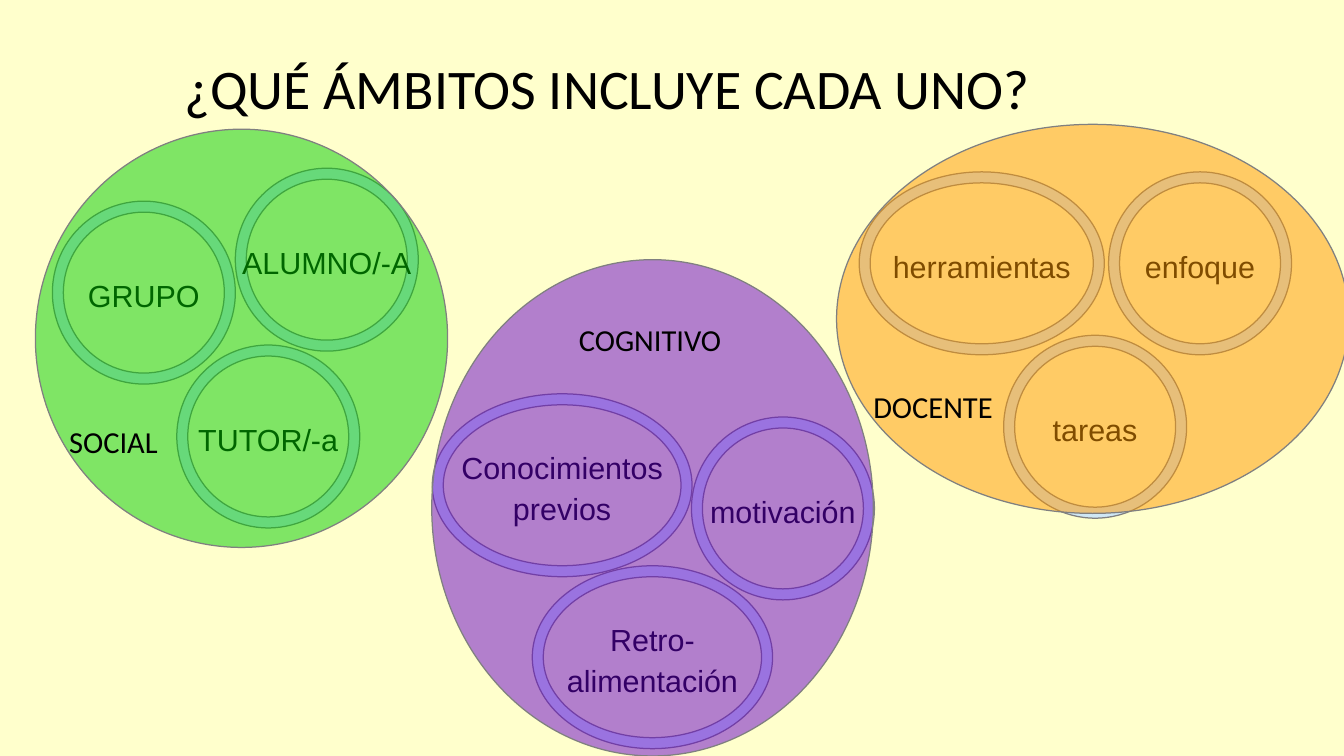
"""Slide with three translucent circles, each holding three labelled rings."""
from lxml import etree
from pptx import Presentation
from pptx.dml.color import RGBColor
from pptx.enum.shapes import MSO_SHAPE
from pptx.enum.text import MSO_ANCHOR, PP_ALIGN
from pptx.oxml.ns import qn
from pptx.util import Inches, Pt

OVAL, DONUT = MSO_SHAPE.OVAL, MSO_SHAPE.DONUT
MIDDLE, TOP, CENTER = MSO_ANCHOR.MIDDLE, MSO_ANCHOR.TOP, PP_ALIGN.CENTER
CELL = Inches(0.1)
COLS, ROWS = 110.2, 62
RING_H, BAND = 15, 0.06
LABEL_W, LABEL_H = 20.2, 7.3

AREAS = [
    ("00CC00", (2.9, 10.6, 33.8, 34.3), ("SOCIAL", -0.8, 34), [
        ("GRUPO", 11.8, 24, 15), ("TUTOR/-a", 22, 35.8, 15), ("ALUMNO/-A", 26.8, 21.3, 15)]),
    ("6600CC", (35.4, 21.3, 36.2, 40.7), ("COGNITIVO", 43.2, 25.6), [
        ("Conocimientos\nprevios", 46.1, 39.8, 21.3),
        ("Retro-\nalimentación", 53.5, 53.9, 19.7), ("motivación", 64.2, 41.7, 15)]),
    ("FF9900", (68.6, 10.2, 42, 31.9), ("DOCENTE", 66.4, 31.1), [
        ("herramientas", 80.5, 21.6, 20.1), ("tareas", 89.8, 35, 15), ("enfoque", 98.4, 21.6, 15)]),
]


def paint(shape, fill, alpha=None):
    shape.shadow.inherit = False
    shape.fill.solid()
    shape.fill.fore_color.rgb = RGBColor.from_string(fill)
    shape.line.color.rgb = RGBColor.from_string("808080")
    shape.line.width = Pt(0.75)
    if alpha:
        color = shape.fill._xPr.find(qn("a:solidFill"))[0]
        etree.SubElement(color, qn("a:alpha")).set("val", str(alpha * 1000))


def write(shape, text, font, size, spacing, margins=(0.1, 0.05), wrap=True, anchor=TOP):
    tf = shape.text_frame
    mx, my = (Inches(m) for m in margins)
    frame = {"word_wrap": wrap, "vertical_anchor": anchor, "margin_left": mx,
             "margin_right": mx, "margin_top": my, "margin_bottom": my}
    for name, value in frame.items():
        setattr(tf, name, value)
    for i, line in enumerate(text.split("\n")):
        p = tf.add_paragraph() if i else tf.paragraphs[0]
        p.alignment, p.line_spacing = CENTER, spacing
        r = p.add_run()
        r.text = line
        for name, value in {"name": font, "size": Pt(size), "bold": False}.items():
            setattr(r.font, name, value)
        r.font.color.rgb = RGBColor.from_string("000000")


prs = Presentation()
prs.slide_width, prs.slide_height = int(COLS * CELL), int(ROWS * CELL)
s = prs.slides.add_slide(prs.slide_layouts[6])
s.background.fill.solid()
s.background.fill.fore_color.rgb = RGBColor.from_string("FFFFCC")

title = s.shapes.add_textbox(*(int(v * CELL) for v in (5.5, 2.4, 88.6, 9.1)))
write(title, "¿QUÉ ÁMBITOS INCLUYE CADA UNO?", "Calibri", 33, 1.07, (0, 0), anchor=MIDDLE)

for _, _, _, rings in AREAS:
    for text, cx, cy, width in rings:
        box = (cx - width / 2, cy - RING_H / 2, width, RING_H)
        ring = s.shapes.add_shape(DONUT, *(int(v * CELL) for v in box))
        ring.adjustments[0] = BAND
        paint(ring, "CFE7F5")
        write(ring, text, "Arial", 18, 1.14, wrap=False, anchor=MIDDLE)

for color, box, _, _ in AREAS:
    paint(s.shapes.add_shape(OVAL, *(int(v * CELL) for v in box)), color, 50)

for _, _, (text, x, y), _ in AREAS:
    label = s.shapes.add_textbox(*(int(v * CELL) for v in (x, y, LABEL_W, LABEL_H)))
    write(label, text, "Calibri", 18, 1.07)

prs.save("out.pptx")
